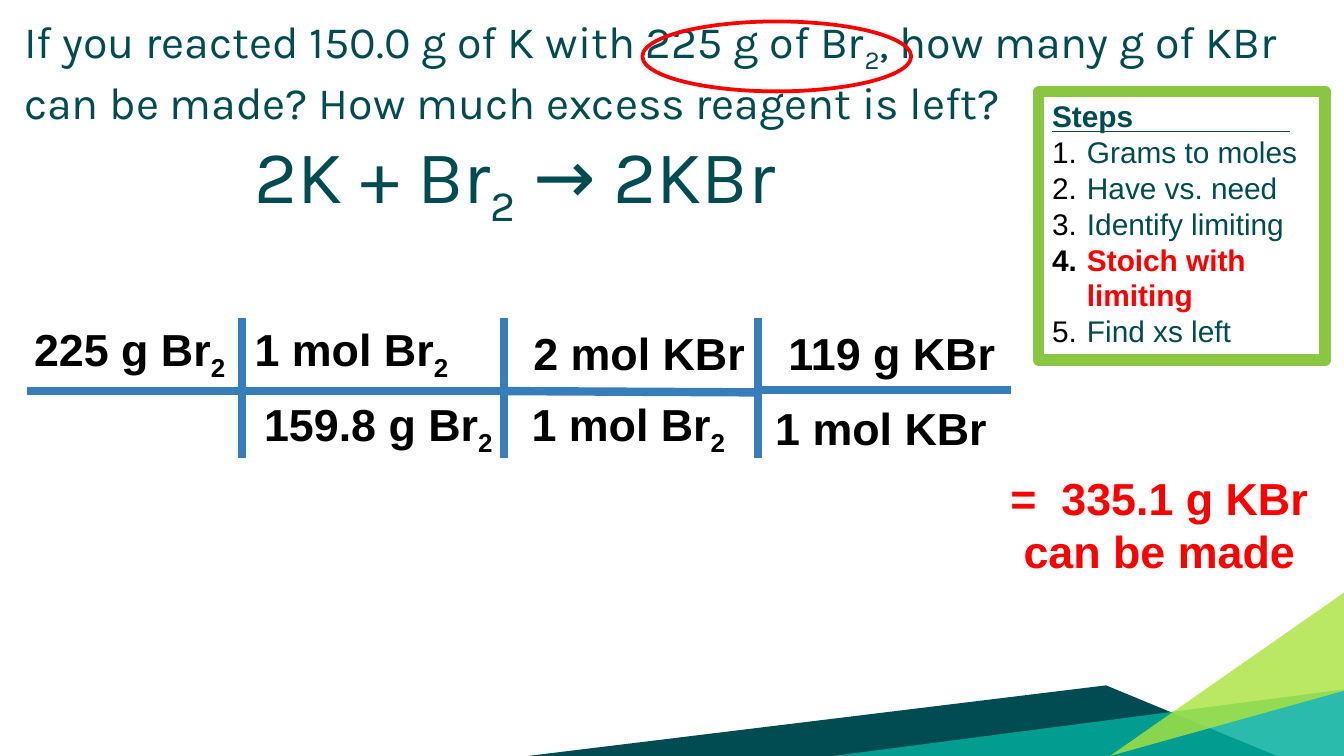
from lxml.etree import SubElement
from pptx import Presentation
from pptx.dml.color import RGBColor
from pptx.enum.shapes import MSO_CONNECTOR as CONN, MSO_SHAPE as SHAPE
from pptx.enum.text import MSO_ANCHOR as ANCHOR, MSO_AUTO_SIZE as FIT, PP_ALIGN as ALIGN
from pptx.oxml.ns import qn
from pptx.util import Inches, Pt

WIDTH = 10
HEIGHT = WIDTH * 9 / 16
DARK, RED, BLACK, WHITE, BLUE = "004C52", "FF0000", "000000", "FFFFFF", "367EB9"
DIVIDERS = [1.8, 3.75, 5.64]
ROW_TOPS = [2.2, 2.76]
CELL_HEIGHT = 0.84
# (left, width, text) for each row of the conversion chart
FACTORS = [
    [(0.05, 1.83, "225 g Br_2"), (1.73, 1.77, "1 mol Br_2"),
     (3.85, 1.81, "2 mol KBr"), (5.73, 1.81, "119 g KBr")],
    [(1.79, 2.05, "159.8 g Br_2"), (3.65, 2.05, "1 mol Br_2"),
     (5.53, 2.05, "1 mol KBr")],
]
RULES = [(0.2, 2.91, 3.75, 2.91), (3.75, 2.91, 5.64, 2.92), (5.64, 2.9, 7.52, 2.9)]
STEPS = ["Grams to moles", "Have vs. need", "Identify limiting",
         "Stoich with\nlimiting", "Find xs left"]
CURRENT_STEP = 3
TRIANGLES = [
    (DARK, 100, [(3.93, HEIGHT), (9.5, HEIGHT), (8.23, 5.1)]),
    ("00AE9D", 83, [(WIDTH, 5.13), (WIDTH, HEIGHT), (6.2, HEIGHT)]),
    ("ABE33F", 81, [(WIDTH, 5.14), (WIDTH, 4.41), (8.26, HEIGHT)]),
]


def rgb(value):
    return RGBColor.from_string(value)


def box(*lengths):
    return [Inches(v) for v in lengths]


def add_run(p, text, color, **fmt):
    r = p.add_run()
    r.text = text
    r.font.color.rgb = rgb(color)
    for name, value in fmt.items():
        setattr(r.font, name, value)
    return r


def write(p, text, color, **fmt):
    """Fill a paragraph; the character after each underscore is a subscript."""
    for n, line in enumerate(text.split("\n")):
        if n:
            p.add_line_break()
        first, *rest = line.split("_")
        add_run(p, first, color, **fmt)
        for part in rest:
            sub = add_run(p, part[0], color, **fmt)
            sub.font._element.set("baseline", "-25000")
            if part[1:]:
                add_run(p, part[1:], color, **fmt)


def set_indent(p, left, first=0):
    pPr = p._p.get_or_add_pPr()
    pPr.set("marL", str(Inches(left)))
    pPr.set("indent", str(Inches(first)))
    return pPr


def add_triangle(slide, color, opacity, points):
    points = [(Inches(x), Inches(y)) for x, y in points]
    builder = slide.shapes.build_freeform(*points[0])
    builder.add_line_segments(points[1:])
    sp = builder.convert_to_shape()
    sp.shadow.inherit = False
    sp.line.fill.background()
    sp.fill.solid()
    sp.fill.fore_color.rgb = rgb(color)
    if opacity < 100:
        clr = sp.fill._xPr.find(qn("a:solidFill"))[0]
        SubElement(clr, qn("a:alpha"), val=str(opacity * 1000))


def add_outlined(slide, kind, at, color, width, fill=None):
    sp = slide.shapes.add_shape(kind, *box(*at))
    sp.shadow.inherit = False
    sp.line.color.rgb, sp.line.width = rgb(color), Pt(width)
    if fill:
        sp.fill.solid()
        sp.fill.fore_color.rgb = rgb(fill)
    else:
        sp.fill.background()
    return sp


def add_line(slide, ends, color=BLUE, width=4.5):
    line = slide.shapes.add_connector(CONN.STRAIGHT, *box(*ends))
    line.line.color.rgb, line.line.width = rgb(color), Pt(width)
    SubElement(line._element.spPr, qn("a:effectLst"))


def add_label(slide, left, top, width, text, color=BLACK):
    tf = slide.shapes.add_textbox(*box(left, top, width, CELL_HEIGHT)).text_frame
    tf.word_wrap, tf.vertical_anchor = True, ANCHOR.MIDDLE
    p = tf.paragraphs[0]
    p.alignment = ALIGN.CENTER
    write(p, text, color, name="Arial", size=Pt(24), bold=True)


def fill_question(sp):
    sp.left, sp.top, sp.width, sp.height = box(0, 0, WIDTH, 2.02)
    tf = sp.text_frame
    tf.auto_size, tf.word_wrap, tf.vertical_anchor = FIT.NONE, True, ANCHOR.TOP
    for side in ("left", "top", "right", "bottom"):
        setattr(tf, f"margin_{side}", Inches(0.1))
    lines = [
        ("If you reacted 150.0 g of K with 225 g of Br_2, how many g of KBr "
         "can be made? How much excess reagent is left?", 24, 0.08),
        ("2K + Br_2 → 2KBr", 40, 1.79),
    ]
    for n, (text, size, indent) in enumerate(lines):
        p = tf.add_paragraph() if n else tf.paragraphs[0]
        SubElement(set_indent(p, indent), qn("a:buNone"))
        p.space_before = Pt(0)
        write(p, text, DARK, name="Karla", size=Pt(size))


def add_steps(slide):
    sp = add_outlined(slide, SHAPE.RECTANGLE, (7.73, 0.68, 2.13, 2), "8BC642", 6, WHITE)
    tf = sp.text_frame
    tf.word_wrap, tf.vertical_anchor = True, ANCHOR.TOP
    font = dict(name="Arial", size=Pt(16))
    p = tf.paragraphs[0]
    p.alignment = ALIGN.LEFT
    write(p, "Steps", DARK, bold=True, **font)
    for n, step in enumerate(STEPS):
        p = tf.add_paragraph()
        p.alignment = ALIGN.LEFT
        pPr = set_indent(p, 0.26, -0.26)
        SubElement(SubElement(pPr, qn("a:buClr")), qn("a:srgbClr"), val=BLACK)
        SubElement(pPr, qn("a:buFont"), typeface="Arial")
        SubElement(pPr, qn("a:buAutoNum"), type="arabicPeriod")
        current = n == CURRENT_STEP
        write(p, step, RED if current else DARK, bold=current, **font)
    add_line(slide, (7.83, 0.98, 9.6, 0.98), DARK, 0.75)


def main():
    prs = Presentation()
    prs.slide_width, prs.slide_height = box(WIDTH, HEIGHT)
    slide = prs.slides.add_slide(prs.slide_layouts[1])
    title, body = slide.placeholders
    title._element.getparent().remove(title._element)
    fill_question(body)
    for triangle in TRIANGLES:
        add_triangle(slide, *triangle)
    add_steps(slide)
    for top, row in zip(ROW_TOPS, FACTORS):
        for left, width, text in row:
            add_label(slide, left, top, width, text)
    for x in DIVIDERS:
        add_line(slide, (x, 2.37, x, 3.41))
    for rule in RULES:
        add_line(slide, rule)
    add_label(slide, 7.39, 3.48, 2.47, "=  335.1 g KBr\ncan be made", RED)
    add_outlined(slide, SHAPE.OVAL, (4.78, 0.16, 2, 0.52), RED, 2)
    prs.save("out.pptx")


if __name__ == "__main__":
    main()
